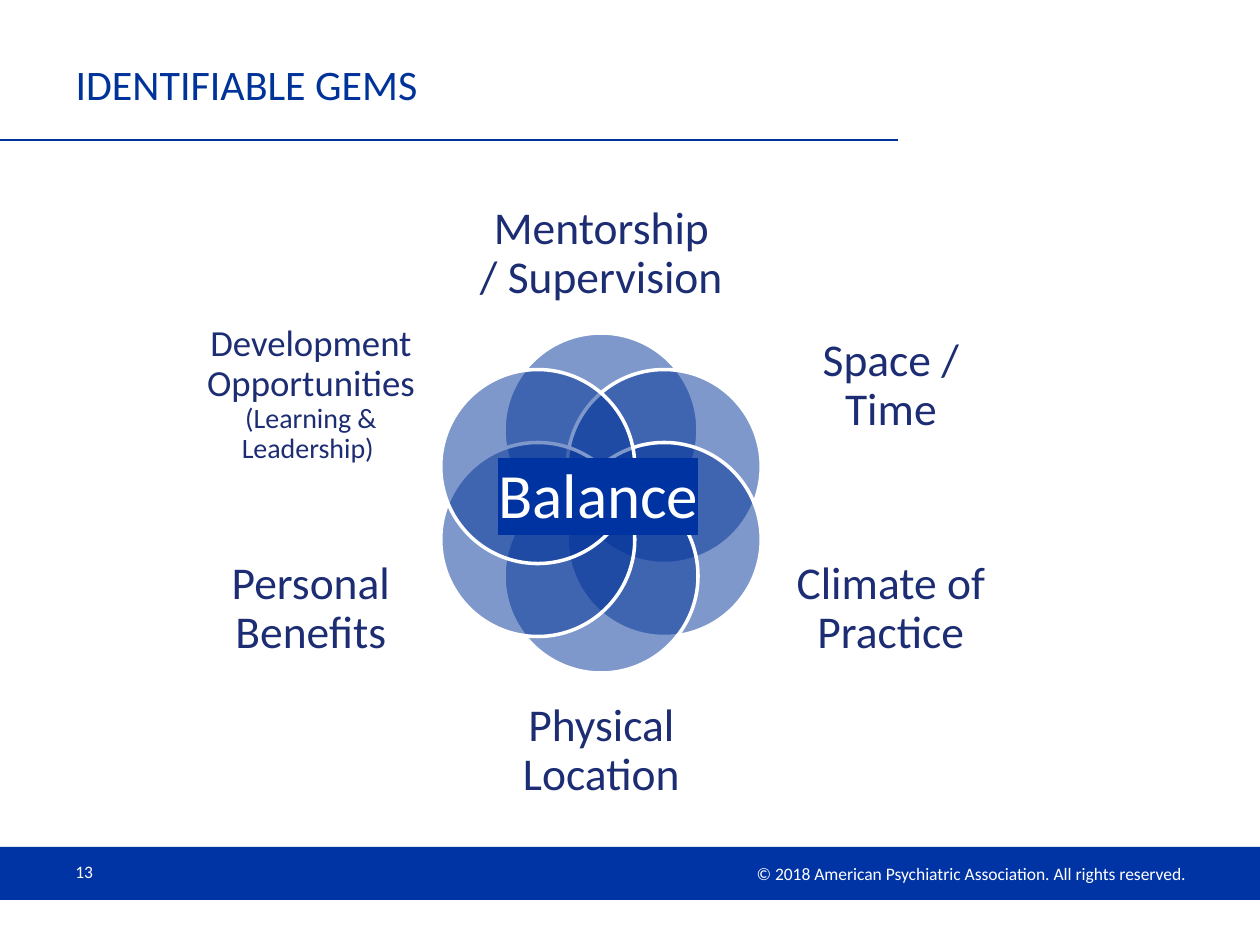
import math
from lxml import etree
from pptx import Presentation
from pptx import util as u
from pptx.dml.color import RGBColor
from pptx.enum import shapes, text
from pptx.oxml.ns import qn

PX = u.Inches(1) // 126
FONT = "Calibri"
COLORS = {"blue": "003399", "bar": "0033A3", "mark": "0033A2",
          "label": "1C2D73", "white": "FFFFFF"}

TITLE = "IDENTIFIABLE GEMS"
FOOTERS = [  # text, box, alignment
    ("© 2018 American Psychiatric Association. All rights reserved.",
     (653, 856, 545, 34), text.PP_ALIGN.RIGHT),
    ("13", (63, 847, 294, 50), text.PP_ALIGN.LEFT),
]
GEMS = [  # clockwise from the top: label runs with sizes, label box
    ([("Mentorship / Supervision", 26)], (480, 188, 243, 132)),
    ([("Space / Time", 26)], (776, 314, 230, 145)),
    ([("Climate of Practice", 26)], (776, 529, 230, 161)),
    ([("Physical Location", 26)], (480, 685, 243, 132)),
    ([("Personal Benefits", 26)], (196, 529, 230, 161)),
    ([("Development Opportunities ", 21), ("(Learning & Leadership) ", 16)],
     (196, 314, 230, 161)),
]
CENTER_X, CENTER_Y, RING_RADIUS, DIAMETER = 601, 503, 73, 194
LABEL_FRAME = dict.fromkeys(
    ("margin_left", "margin_top", "margin_right", "margin_bottom"), 0)


def emu(box):
    return [round(value * PX) for value in box]


def rgb(name):
    return RGBColor.from_string(COLORS[name])


def write(shape, runs, color, align=text.PP_ALIGN.LEFT, spacing=1.0, **frame_format):
    """Fill a shape with one paragraph of (text, size) runs."""
    frame = shape.text_frame
    settings = {"word_wrap": True, "vertical_anchor": text.MSO_ANCHOR.MIDDLE,
                **frame_format}
    for name, value in settings.items():
        setattr(frame, name, value)
    paragraph = frame.paragraphs[0]
    paragraph.alignment = align
    paragraph.line_spacing = spacing
    for words, size in runs:
        run = paragraph.add_run()
        run.text = words
        run.font.name = FONT
        run.font.size = u.Pt(size)
        run.font.color.rgb = rgb(color)
    return paragraph


def add_circle(slide, angle):
    left = CENTER_X + RING_RADIUS * math.sin(angle) - DIAMETER / 2
    top = CENTER_Y - RING_RADIUS * math.cos(angle) - DIAMETER / 2
    circle = slide.shapes.add_shape(
        shapes.MSO_SHAPE.OVAL, *emu((left, top, DIAMETER, DIAMETER)))
    circle.shadow.inherit = False
    circle.fill.solid()
    circle.fill.fore_color.rgb = rgb("blue")
    color = circle.fill._xPr.find(qn("a:solidFill"))[0]
    etree.SubElement(color, qn("a:alpha"), val="50000")
    circle.line.color.rgb = rgb("white")
    circle.line.width = u.Pt(2)


def highlight(run, color):
    mark = etree.Element(qn("a:highlight"))
    etree.SubElement(mark, qn("a:srgbClr"), val=COLORS[color])
    run.font._element.find(qn("a:solidFill")).addnext(mark)


def main():
    presentation = Presentation()
    presentation.slide_width, presentation.slide_height = emu((1260, 945))
    slide = presentation.slides.add_slide(presentation.slide_layouts[5])

    bar = slide.shapes.add_shape(
        shapes.MSO_SHAPE.RECTANGLE, *emu((0, 847, 1260, 53)))
    bar.shadow.inherit = False
    bar.fill.solid()
    bar.fill.fore_color.rgb = rgb("bar")
    bar.line.fill.background()

    rule = slide.shapes.add_connector(
        shapes.MSO_CONNECTOR.STRAIGHT, *emu((0, 140, 898, 140)))
    rule.line.color.rgb = rgb("blue")
    rule.line.width = u.Pt(0.75)
    etree.SubElement(rule._element.spPr, qn("a:effectLst"))

    for words, box, align in FOOTERS:
        write(slide.shapes.add_textbox(*emu(box)), [(words, 10)], "white", align)

    title = slide.shapes.title
    title.left, title.top, title.width, title.height = emu((63, 43, 835, 81))
    write(title, [(TITLE, 24)], "blue")

    for index, (runs, box) in enumerate(GEMS):
        add_circle(slide, index * math.tau / len(GEMS))
        write(slide.shapes.add_textbox(*emu(box)), runs, "label",
              text.PP_ALIGN.CENTER, 0.9, **LABEL_FRAME)

    balance = slide.shapes.add_textbox(*emu((486, 449, 227, 89)))
    paragraph = write(balance, [("Balance", 36)], "white",
                      vertical_anchor=text.MSO_ANCHOR.TOP)
    highlight(paragraph.runs[0], "mark")

    presentation.save("out.pptx")


if __name__ == "__main__":
    main()
